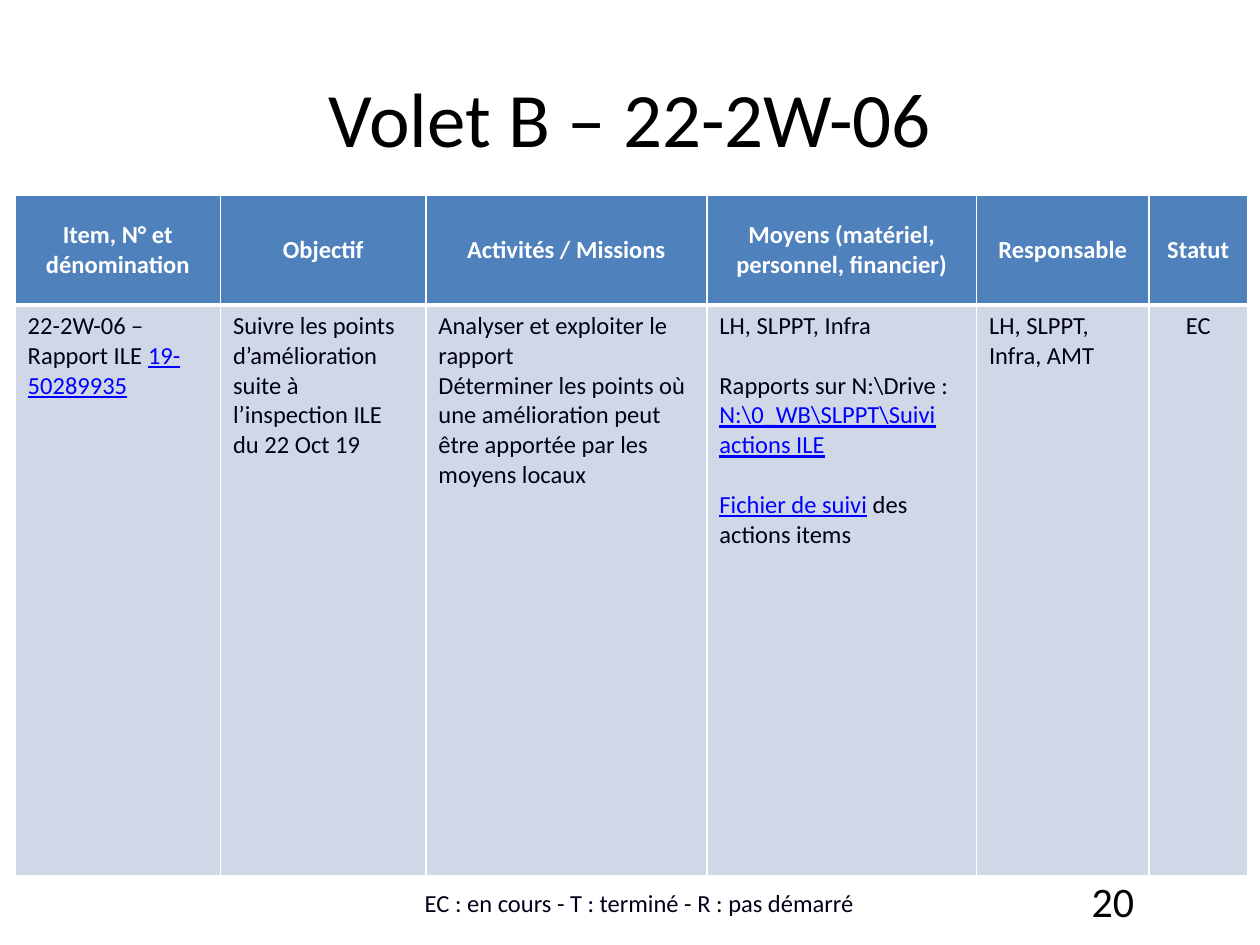
from dataclasses import dataclass

from lxml import etree
from pptx import Presentation
from pptx.dml.color import RGBColor
from pptx.enum.text import MSO_ANCHOR, PP_ALIGN
from pptx.oxml.ns import qn
from pptx.util import Inches, Pt

LEFT, CENTER, RIGHT = PP_ALIGN.LEFT, PP_ALIGN.CENTER, PP_ALIGN.RIGHT
TOP, MIDDLE, BOTTOM = MSO_ANCHOR.TOP, MSO_ANCHOR.MIDDLE, MSO_ANCHOR.BOTTOM
FONT = "Calibri"
BLACK, WHITE, NAVY, LINK = "000000", "FFFFFF", "000018", "0000FF"
HEADER_FILL, BODY_FILL = "4F81BD", "D0D8E8"


@dataclass
class Run:
    text: str
    size: float = 14
    color: str = NAVY
    bold: bool = False
    underline: bool = False


@dataclass
class Para:
    runs: list[Run]
    align: PP_ALIGN = LEFT
    before: float = 0


@dataclass
class Column:
    width: float
    header: str
    body: list[Para]


def rgb(color: str) -> RGBColor:
    return RGBColor.from_string(color)


def link(text: str) -> Run:
    return Run(text, color=LINK, underline=True)


def write(tf, paras: list[Para]) -> None:
    for i, para in enumerate(paras):
        p = tf.paragraphs[0] if i == 0 else tf.add_paragraph()
        p.alignment = para.align
        if para.before:
            p.space_before = Pt(para.before)
        for run in para.runs:
            r = p.add_run()
            r.text = run.text
            r.font.name = FONT
            r.font.size = Pt(run.size)
            r.font.bold = run.bold
            r.font.underline = run.underline
            r.font.color.rgb = rgb(run.color)


def set_borders(cell, top: float, bottom: float) -> None:
    tcPr = cell._tc.get_or_add_tcPr()
    widths = {"a:lnL": 1, "a:lnR": 1, "a:lnT": top, "a:lnB": bottom}
    for i, (tag, width) in enumerate(widths.items()):
        ln = etree.Element(qn(tag), w=str(Pt(width)))
        fill = etree.SubElement(ln, qn("a:solidFill"))
        etree.SubElement(fill, qn("a:srgbClr"), val=WHITE)
        tcPr.insert(i, ln)


def fill_cell(cell, paras: list[Para], fill: str, anchor: MSO_ANCHOR,
              top: float, bottom: float) -> None:
    cell.fill.solid()
    cell.fill.fore_color.rgb = rgb(fill)
    cell.vertical_anchor = anchor
    write(cell.text_frame, paras)
    set_borders(cell, top, bottom)


def add_table(slide, columns: list[Column], x: float, y: float,
              heights: list[float]) -> None:
    width = sum(c.width for c in columns)
    table = slide.shapes.add_table(
        len(heights), len(columns), Inches(x), Inches(y),
        Inches(width), Inches(sum(heights))).table
    table.horz_banding = False
    for row, height in zip(table.rows, heights):
        row.height = Inches(height)
    for i, col in enumerate(columns):
        table.columns[i].width = Inches(col.width)
        header = [Para([Run(col.header, color=WHITE, bold=True)], CENTER)]
        fill_cell(table.cell(0, i), header, HEADER_FILL, MIDDLE, 1, 3)
        fill_cell(table.cell(1, i), col.body, BODY_FILL, TOP, 3, 1)


def add_text(slide, x: float, y: float, w: float, h: float, para: Para,
             anchor: MSO_ANCHOR) -> None:
    tf = slide.shapes.add_textbox(
        Inches(x), Inches(y), Inches(w), Inches(h)).text_frame
    tf.word_wrap = True
    tf.vertical_anchor = anchor
    write(tf, [para])


COLUMNS = [
    Column(1.63, "Item, N° et dénomination",
           [Para([Run("22-2W-06 – Rapport ILE "), link("19-50289935")])]),
    Column(1.63, "Objectif",
           [Para([Run("Suivre les points d’amélioration suite à "
                      "l’inspection ILE du 22 Oct 19")])]),
    Column(2.23, "Activités / Missions",
           [Para([Run("Analyser et exploiter le rapport")]),
            Para([Run("Déterminer les points où une amélioration peut être "
                      "apportée par les moyens locaux")])]),
    Column(2.14, "Moyens (matériel, personnel, financier)",
           [Para([Run("LH, SLPPT, Infra")]),
            Para([Run("Rapports sur N:\\Drive : "),
                  link("N:\\0_WB\\SLPPT\\Suivi actions ILE")], before=17),
            Para([link("Fichier de suivi"), Run(" des actions items")],
                 before=17)]),
    Column(1.37, "Responsable", [Para([Run("LH, SLPPT, Infra, AMT")])]),
    Column(0.78, "Statut", [Para([Run("EC")], CENTER)]),
]


def main() -> None:
    prs = Presentation()
    prs.slide_width, prs.slide_height = Inches(10), Inches(7.5)
    slide = prs.slides.add_slide(prs.slide_layouts[5])

    title = slide.shapes.title
    title.left, title.top = Inches(0.5), Inches(0.3)
    title.width, title.height = Inches(9), Inches(1.25)
    title.text_frame.vertical_anchor = MIDDLE
    write(title.text_frame,
          [Para([Run("Volet B – 22-2W-06", 44, BLACK)], CENTER)])

    add_table(slide, COLUMNS, 0.12, 1.55, [0.87, 4.53])
    add_text(slide, 7.17, 6.95, 1.93, 0.4,
             Para([Run("20", 24, BLACK)], RIGHT), MIDDLE)
    add_text(slide, 2.32, 6.95, 5.51, 0.38,
             Para([Run("EC : en cours - T : terminé - R : pas démarré")],
                  CENTER), BOTTOM)
    prs.save("out.pptx")


if __name__ == "__main__":
    main()
